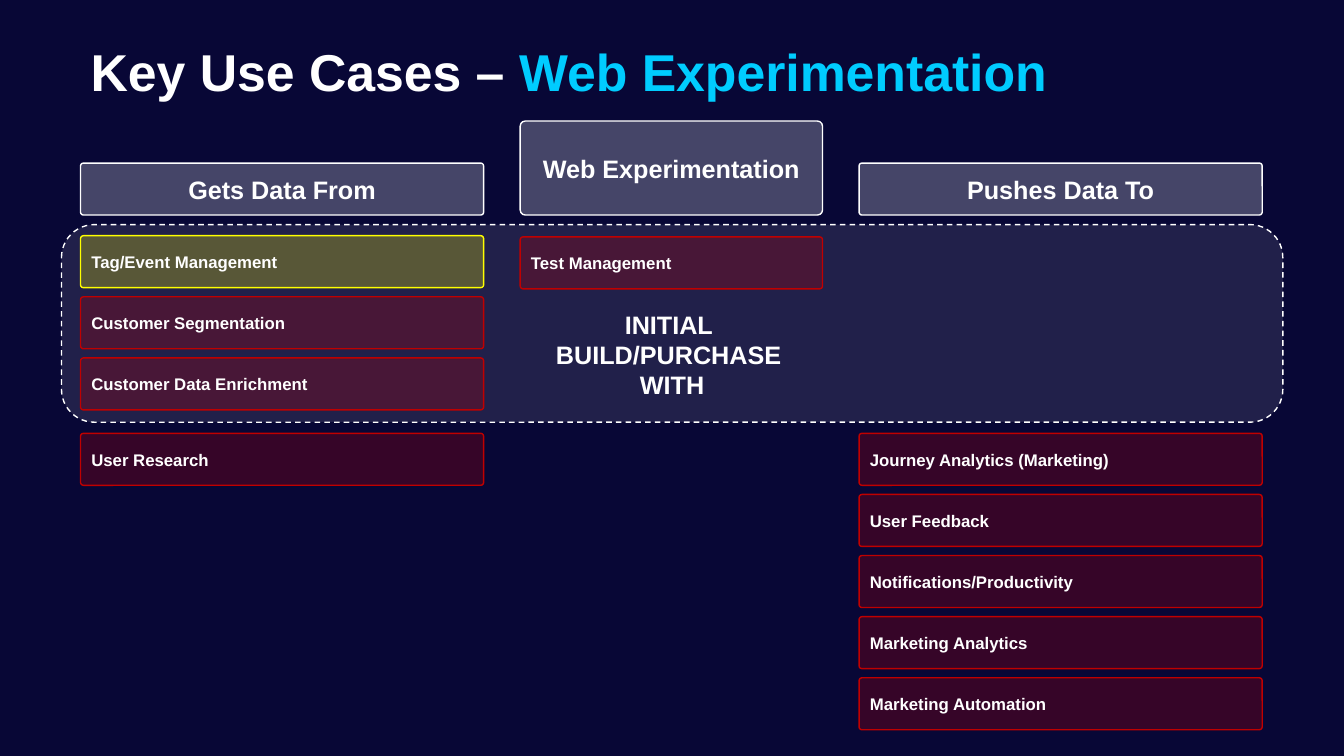
from itertools import accumulate

from lxml.etree import SubElement
from pptx import Presentation
from pptx.dml.color import RGBColor
from pptx.enum.dml import MSO_LINE_DASH_STYLE as Dash
from pptx.enum.shapes import MSO_AUTO_SHAPE_TYPE as Shape
from pptx.enum.text import MSO_ANCHOR as Anchor, MSO_AUTO_SIZE as AutoSize, PP_ALIGN as Align
from pptx.oxml.ns import qn
from pptx.util import Cm, Pt

COLORS = {
    "navy": "080736",
    "white": "FFFFFF",
    "yellow": "FFFF00",
    "red": "C00000",
    "cyan": "00CCFF",
}


def rgb(name):
    return RGBColor.from_string(COLORS[name])


class SlideBuilder:
    font = "Arial"
    radius = 0.055

    def __init__(self, prs):
        self.s = prs.slides.add_slide(prs.slide_layouts[5])
        fill = self.s.background.fill
        fill.solid()
        fill.fore_color.rgb = rgb("navy")

    def style(self, p, size, align):
        p.alignment = align
        p.font.name = self.font
        p.font.size = Pt(size)
        p.font.bold = True

    def title(self, parts, x, y, w, h):
        sp = self.s.shapes.title
        sp.left, sp.top, sp.width, sp.height = Cm(x), Cm(y), Cm(w), Cm(h)
        tf = sp.text_frame
        tf.word_wrap = True
        tf.auto_size = AutoSize.NONE
        tf.vertical_anchor = Anchor.MIDDLE
        p = tf.paragraphs[0]
        p.line_spacing = 0.9
        self.style(p, 37, Align.LEFT)
        for text, color in parts:
            r = p.add_run()
            r.text = text
            r.font.color.rgb = rgb(color)

    def box(self, text, x, y, w, h, color, opacity, size=18, align=Align.CENTER):
        sp = self.s.shapes.add_shape(Shape.ROUNDED_RECTANGLE, Cm(x), Cm(y), Cm(w), Cm(h))
        sp.shadow.inherit = False
        sp.fill.solid()
        sp.fill.fore_color.rgb = rgb(color)
        clr = sp.fill._xPr.find(qn("a:solidFill"))[0]
        SubElement(clr, qn("a:alpha"), val=str(opacity * 1000))
        sp.line.color.rgb = rgb(color)
        sp.line.width = Pt(1)
        tf = sp.text_frame
        tf.word_wrap = True
        tf.vertical_anchor = Anchor.MIDDLE
        p = tf.paragraphs[0]
        p.text = text
        self.style(p, size, align)
        p.font.color.rgb = rgb("white")
        return sp

    def panel(self, text, x, y, w, h, text_top):
        sp = self.box(text, x, y, w, h, "white", 10)
        sp.line.dash_style = Dash.DASH
        sp.text_frame.margin_top = Cm(text_top)

    def header(self, text, x, bottom, w, h):
        sp = self.box(text, x, bottom - h, w, h, "white", 25)
        sp.adjustments[0] = self.radius

    def cards(self, labels, x, y, w, h, pitch, color="red"):
        for i, label in enumerate(labels):
            sp = self.box(label, x, y + i * pitch, w, h, color, 25, 12, Align.LEFT)
            sp.adjustments[0] = self.radius


def main():
    prs = Presentation()
    prs.slide_width, prs.slide_height = Cm(33.87), Cm(19.05)
    slide = SlideBuilder(prs)

    side, middle, gap = 10.16, 7.62, 0.92
    left, center, right = accumulate([2.03, side + gap, middle + gap])
    row, pitch = 1.31, 1.54
    header_bottom, first_row, later_row = 5.42, 5.94, 10.92

    slide.title([("Key Use Cases – ", "white"), ("Web Experimentation", "cyan")],
                left, 1.07, 29.51, 1.63)
    slide.panel("INITIAL \vBUILD/PURCHASE \vWITH", 1.55, 5.66, 30.78, 4.98, 1.68)

    slide.header("Gets Data From", left, header_bottom, side, row)
    slide.header("Web Experimentation", center, header_bottom, middle, 2.37)
    slide.header("Pushes Data To", right, header_bottom, side, row)

    slide.cards(["Tag/Event Management"], left, first_row, side, row, pitch, "yellow")
    slide.cards(["Customer Segmentation", "Customer Data Enrichment"],
                left, first_row + pitch, side, row, pitch)
    slide.cards(["User Research"], left, later_row, side, row, pitch)
    slide.cards(["Test Management"], center, first_row + 0.03, middle, row, pitch)
    slide.cards(["Journey Analytics (Marketing)", "User Feedback",
                 "Notifications/Productivity", "Marketing Analytics",
                 "Marketing Automation"], right, later_row, side, row, pitch)

    prs.save("out.pptx")


if __name__ == "__main__":
    main()
